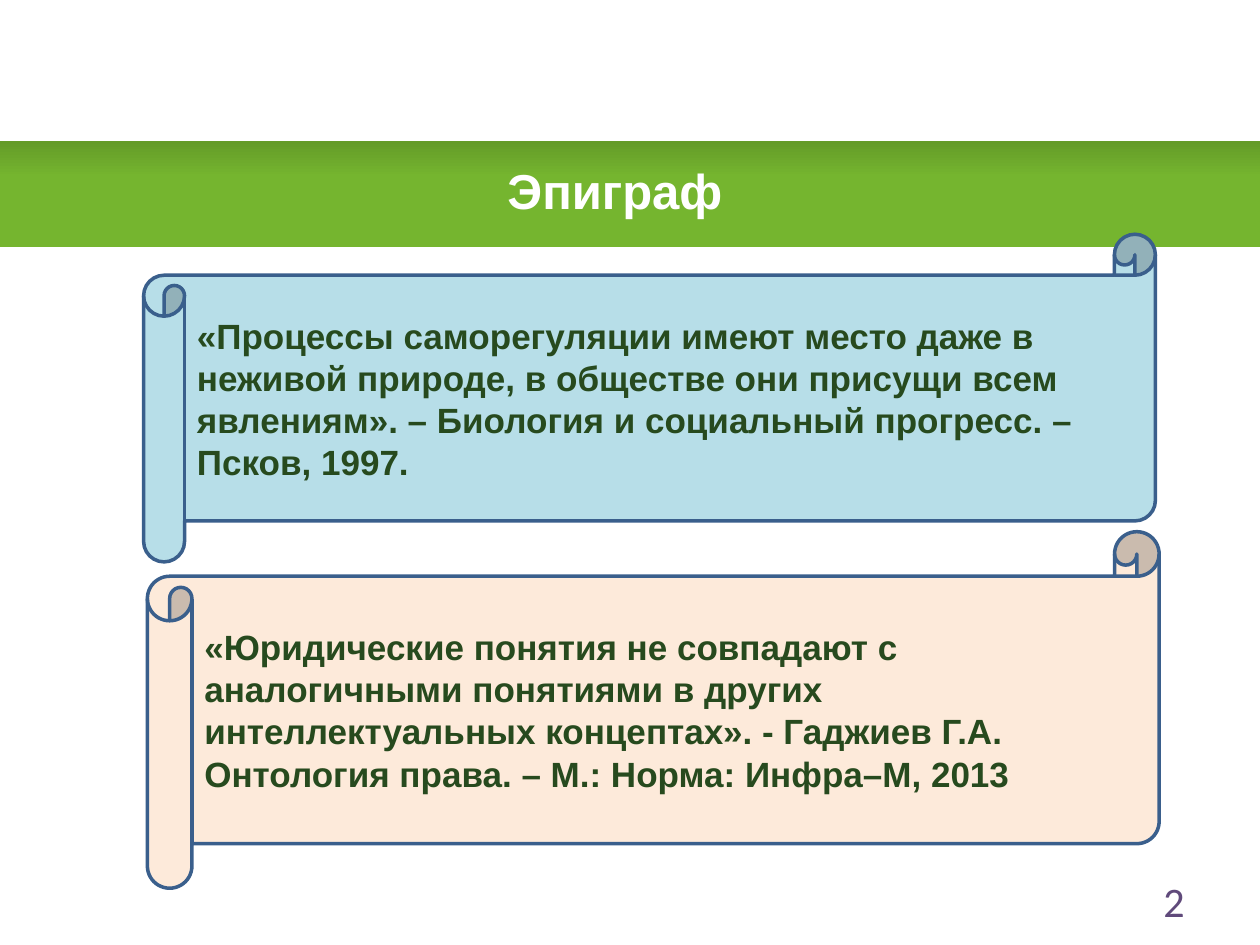
"""Builds the epigraph slide: a green title band and two quotations on scrolls."""
import pptx
import pptx.dml.color
import pptx.enum.shapes
import pptx.enum.text
import pptx.util

SHAPES = pptx.enum.shapes.MSO_SHAPE
ALIGN = pptx.enum.text.PP_ALIGN
WIDTH, HEIGHT = 10, 7.5

COLORS = {
    "band_dark": "649B28", "band": "75B52F", "title": "FFFFFF", "number": "604A7B",
    "sky": "B7DEE8", "peach": "FDEADA", "outline": "3A5F8C", "quote": "274A1E",
}
FORMATS = {
    "title": {"size": pptx.util.Pt(28), "name": "Arial", "bold": True},
    "number": {"size": pptx.util.Pt(24), "name": "Calibri", "bold": False},
    "quote": {"size": pptx.util.Pt(20), "name": "Arial", "bold": True},
}
BAND = (0, 1.12, WIDTH, 0.84)
LABELS = [
    ("Эпиграф", "title", ALIGN.CENTER, (0.38, 1.16, 9, 0.7)),
    ("2", "number", ALIGN.RIGHT, (7.17, 6.95, 2.33, 0.4)),
]
QUOTES = [
    ("«Процессы саморегуляции имеют место даже в неживой природе, в обществе они "
     "присущи всем явлениям». – Биология и социальный прогресс. – Псков, 1997.",
     "sky", (1.14, 1.86, 8.03, 2.6)),
    ("«Юридические понятия не совпадают с аналогичными понятиями в других "
     "интеллектуальных концептах». - Гаджиев Г.А. Онтология права. – М.: Норма: "
     "Инфра–М, 2013",
     "peach", (1.17, 4.22, 8.03, 2.83)),
]


def rgb(key):
    return pptx.dml.color.RGBColor.from_string(COLORS[key])


def inches(place):
    return [pptx.util.Inches(length) for length in place]


def write(holder, words, role, align):
    frame = holder.text_frame
    frame.word_wrap = True
    frame.vertical_anchor = pptx.enum.text.MSO_ANCHOR.MIDDLE
    paragraph = frame.paragraphs[0]
    paragraph.alignment = align
    run = paragraph.add_run()
    run.text = words
    for attribute, value in FORMATS[role].items():
        setattr(run.font, attribute, value)
    run.font.color.rgb = rgb(role)


def add_band(slide):
    band = slide.shapes.add_shape(SHAPES.RECTANGLE, *inches(BAND))
    band.shadow.inherit = False
    band.line.fill.background()
    band.fill.gradient()
    band.fill.gradient_angle = 270
    for stop, (key, position) in zip(band.fill.gradient_stops,
                                     [("band_dark", 0), ("band", 0.34)]):
        stop.color.rgb = rgb(key)
        stop.position = position


def add_scroll(slide, words, paper, place):
    scroll = slide.shapes.add_shape(SHAPES.HORIZONTAL_SCROLL, *inches(place))
    scroll.shadow.inherit = False
    scroll.fill.solid()
    scroll.fill.fore_color.rgb = rgb(paper)
    scroll.line.color.rgb = rgb("outline")
    scroll.line.width = pptx.util.Pt(2)
    write(scroll, words, "quote", ALIGN.LEFT)


def main():
    deck = pptx.Presentation()
    deck.slide_width, deck.slide_height = inches((WIDTH, HEIGHT))
    slide = deck.slides.add_slide(deck.slide_layouts[6])
    add_band(slide)
    for words, role, align, place in LABELS:
        write(slide.shapes.add_textbox(*inches(place)), words, role, align)
    for words, paper, place in QUOTES:
        add_scroll(slide, words, paper, place)
    deck.save("out.pptx")


if __name__ == "__main__":
    main()
